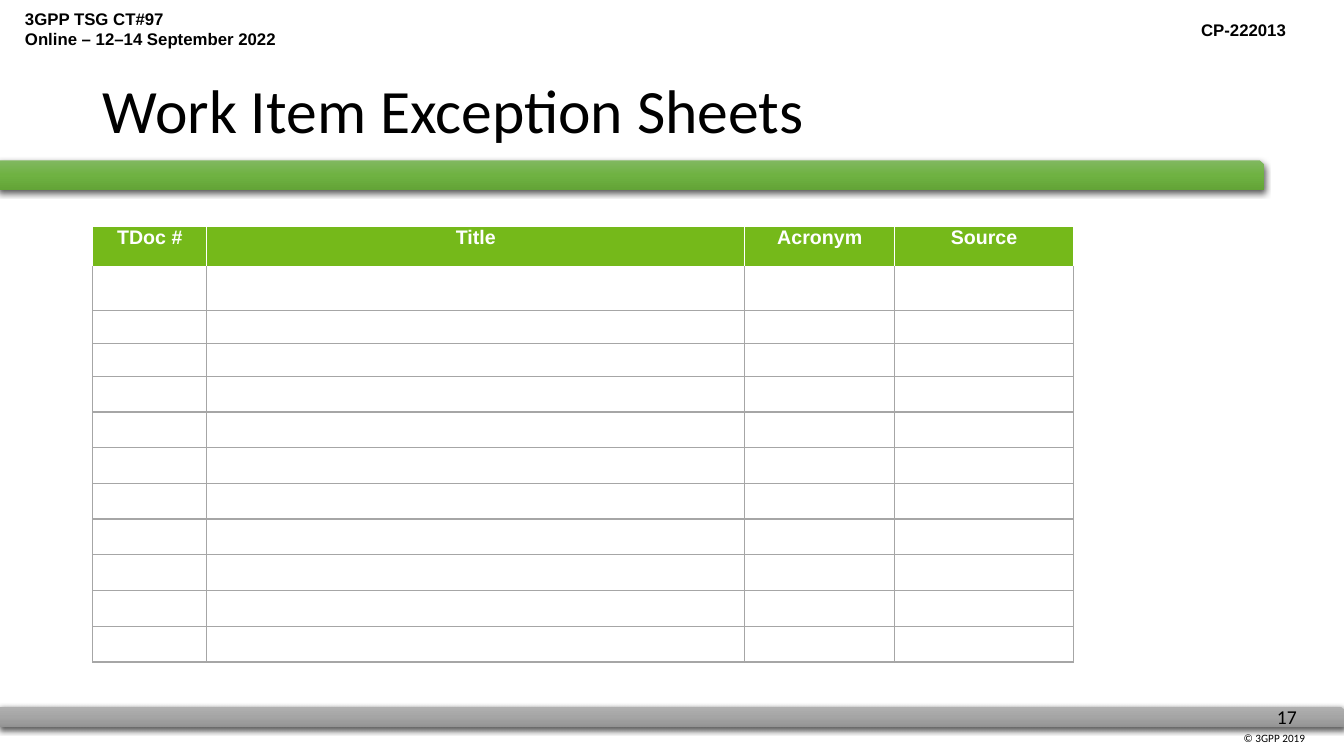
import pptx
import pptx.util
import pptx.dml.color
import pptx.enum.shapes
import pptx.enum.text
import pptx.oxml
import pptx.oxml.ns

Cm, Pt = pptx.util.Cm, pptx.util.Pt
RGB = pptx.dml.color.RGBColor.from_string
ALIGN = pptx.enum.text.PP_ALIGN
ANCHOR = pptx.enum.text.MSO_ANCHOR
NS = pptx.oxml.ns.nsdecls("a")

THEME = {
    "title": {"name": "Calibri", "size": Pt(44), "bold": False, "color": "000000"},
    "meeting": {"name": "Arial", "size": Pt(12), "bold": True, "color": "000000"},
    "header": {"name": "Arial", "size": Pt(14), "bold": True, "color": "FFFFFF"},
    "number": {"name": "Calibri", "size": Pt(14), "bold": False, "color": "000000"},
    "copyright": {"name": "Calibri", "size": Pt(8), "bold": False, "color": "000000"},
    "grey_bar": ("AFAFAF", "A5A5A5", "939393"),
    "green_bar": ("81B861", "6FB242", "62A336"),
    "header_fill": "75B91A",
    "header_line": "FFFFFF",
    "grid_line": "A6A6A6",
}


def write(tf, lines, style, align=ALIGN.LEFT):
    for i, line in enumerate(lines):
        p = tf.paragraphs[0] if i == 0 else tf.add_paragraph()
        p.alignment = align
        r = p.add_run()
        r.text = line
        for key, value in THEME[style].items():
            if key == "color":
                r.font.color.rgb = RGB(value)
            else:
                setattr(r.font, key, value)


prs = pptx.Presentation()
prs.slide_width, prs.slide_height = Cm(33.87), Cm(19.05)
s = prs.slides.add_slide(prs.slide_layouts[5])

# Gradient bars with a soft shadow below
bars = [
    ("grey_bar", 0, 17.81, 33.88, 0.51),
    ("green_bar", -0.03, 4.04, 31.9, 0.76),
]
for name, *box in bars:
    sp = s.shapes.add_shape(pptx.enum.shapes.MSO_SHAPE.SNIP_1_RECTANGLE, *map(Cm, box))
    sp.line.fill.background()
    stops = "".join(
        f'<a:gs pos="{i * 50000}"><a:srgbClr val="{color}"/></a:gs>'
        for i, color in enumerate(THEME[name])
    )
    gradient = pptx.oxml.parse_xml(
        f'<a:gradFill {NS} rotWithShape="1"><a:gsLst>{stops}</a:gsLst>'
        '<a:lin ang="5400000" scaled="0"/></a:gradFill>'
    )
    shadow = pptx.oxml.parse_xml(
        f'<a:effectLst {NS}><a:outerShdw blurRad="{Pt(4.5)}" dist="{Pt(1.5)}" '
        'dir="5400000" algn="ctr" rotWithShape="0"><a:srgbClr val="000000">'
        '<a:alpha val="63000"/></a:srgbClr></a:outerShdw></a:effectLst>'
    )
    spPr = sp._element.spPr
    spPr.find(pptx.oxml.ns.qn("a:ln")).addprevious(gradient)
    spPr.append(shadow)

# Meeting details, document number and footer
labels = [
    (["© 3GPP 2019"], "copyright", ALIGN.LEFT, True, (31.09, 18.31, 2.74, 0.58)),
    (["17"], "number", ALIGN.LEFT, False, (31.93, 17.65, 1.09, 0.86)),
    (["3GPP TSG CT#97", "Online – 12–14 September 2022"],
     "meeting", ALIGN.LEFT, True, (0.38, 0.1, 8.79, 1.27)),
    (["CP-222013"], "meeting", ALIGN.RIGHT, True, (25.45, 0.38, 7.21, 0.8)),
]
for lines, style, align, wrap, box in labels:
    tf = s.shapes.add_textbox(*map(Cm, box)).text_frame
    tf.word_wrap = wrap
    write(tf, lines, style, align)

# Exception sheet table
headers = ["TDoc #", "Title", "Acronym", "Source"]
col_widths = [2.87, 13.56, 3.78, 4.5]
row_heights = [1.02, 1.09, 0.83, 0.83] + [0.9] * 8
tbl = s.shapes.add_table(
    len(row_heights), len(headers), Cm(2.34), Cm(5.71),
    Cm(sum(col_widths)), Cm(sum(row_heights)),
).table
tbl.first_row = tbl.horz_banding = False
for col, width in zip(tbl.columns, col_widths):
    col.width = Cm(width)
for i, (row, height) in enumerate(zip(tbl.rows, row_heights)):
    row.height = Cm(height)
    for j, cell in enumerate(row.cells):
        cell.margin_left = cell.margin_right = Cm(0.13)
        cell.margin_top = cell.margin_bottom = 0
        if i == 0:
            cell.fill.solid()
            cell.fill.fore_color.rgb = RGB(THEME["header_fill"])
            write(cell.text_frame, [headers[j]], "header", ALIGN.CENTER)
        else:
            cell.fill.background()
        tcPr = cell._tc.get_or_add_tcPr()
        for k, side in enumerate("LRTB"):
            white = i == 0 or (i == 1 and side == "T")
            color = THEME["header_line" if white else "grid_line"]
            tcPr.insert(k, pptx.oxml.parse_xml(
                f'<a:ln{side} {NS} w="{Pt(1)}"><a:solidFill>'
                f'<a:srgbClr val="{color}"/></a:solidFill></a:ln{side}>'
            ))

# Title
title = s.shapes.title
title.left, title.top, title.width, title.height = map(Cm, (2.34, 1.02, 29.21, 3.68))
tf = title.text_frame
tf.auto_size = pptx.enum.text.MSO_AUTO_SIZE.NONE
tf.vertical_anchor = ANCHOR.MIDDLE
write(tf, ["Work Item Exception Sheets"], "title")
tf.paragraphs[0].line_spacing = 0.9

prs.save("out.pptx")
